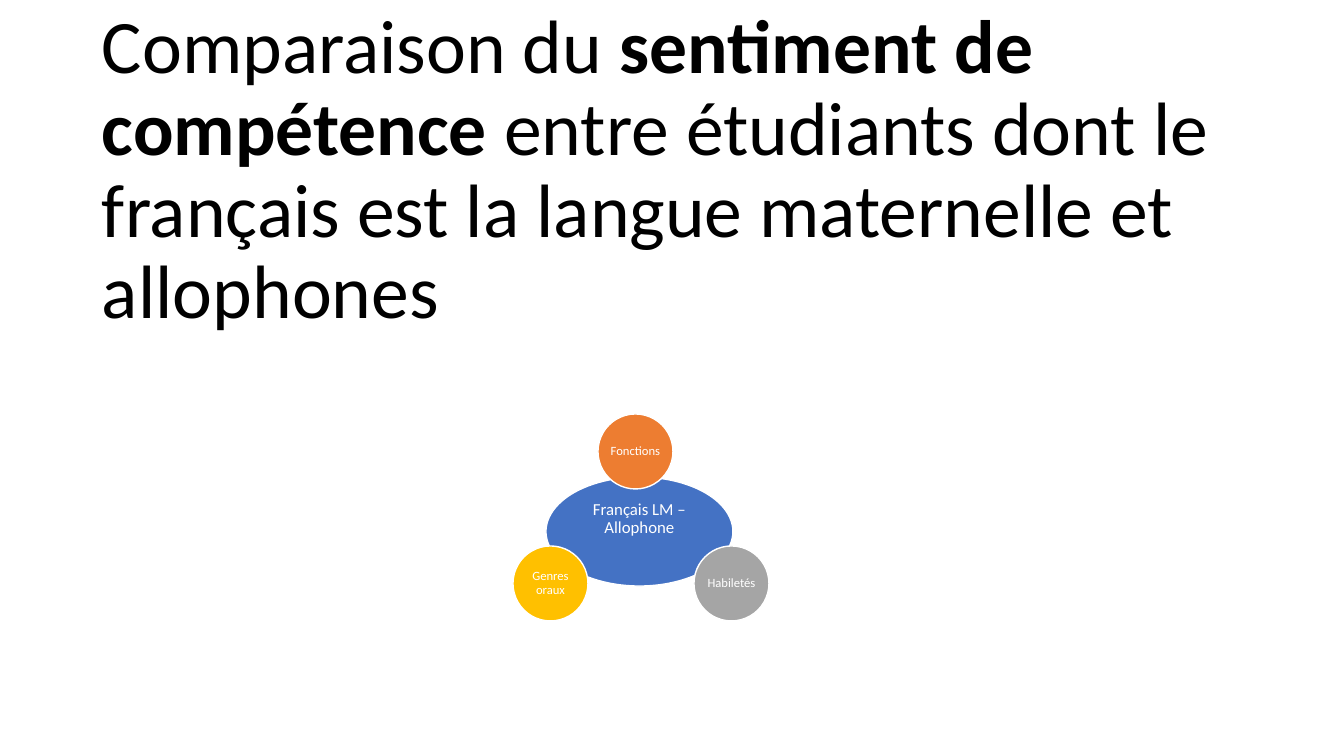
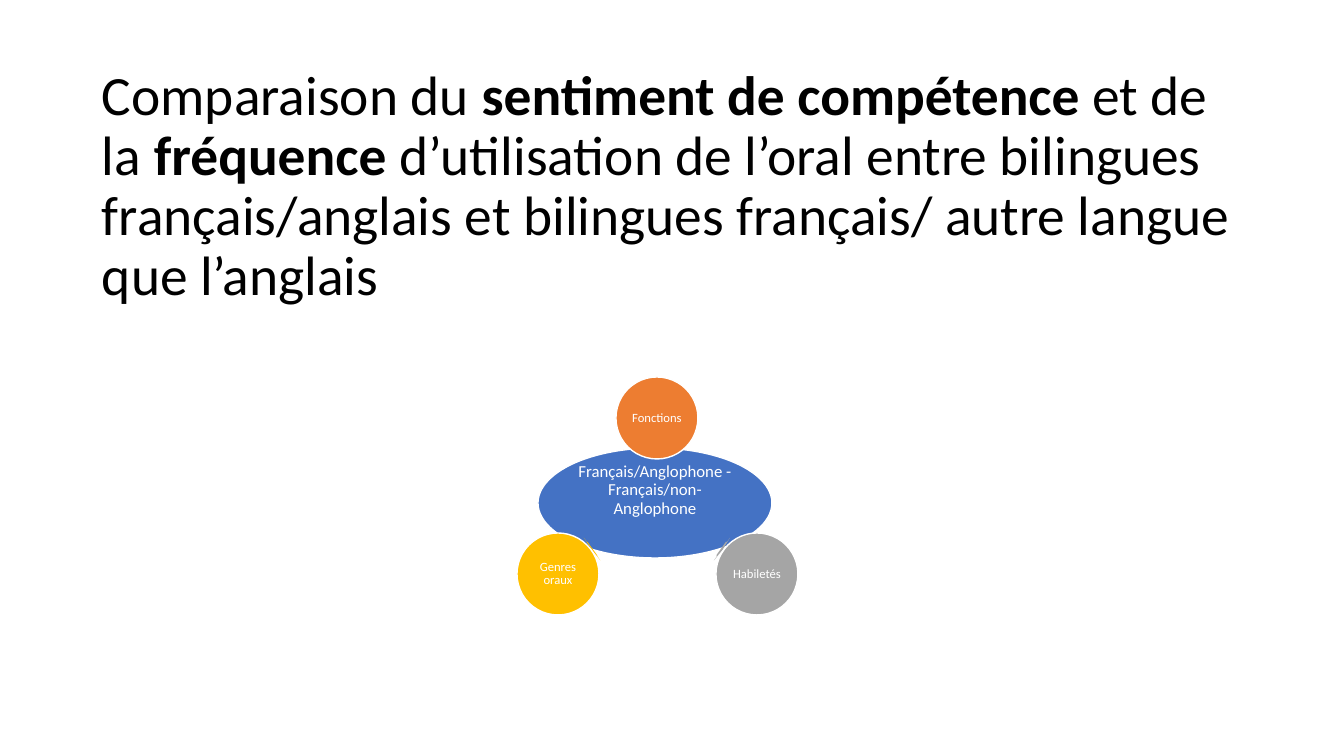
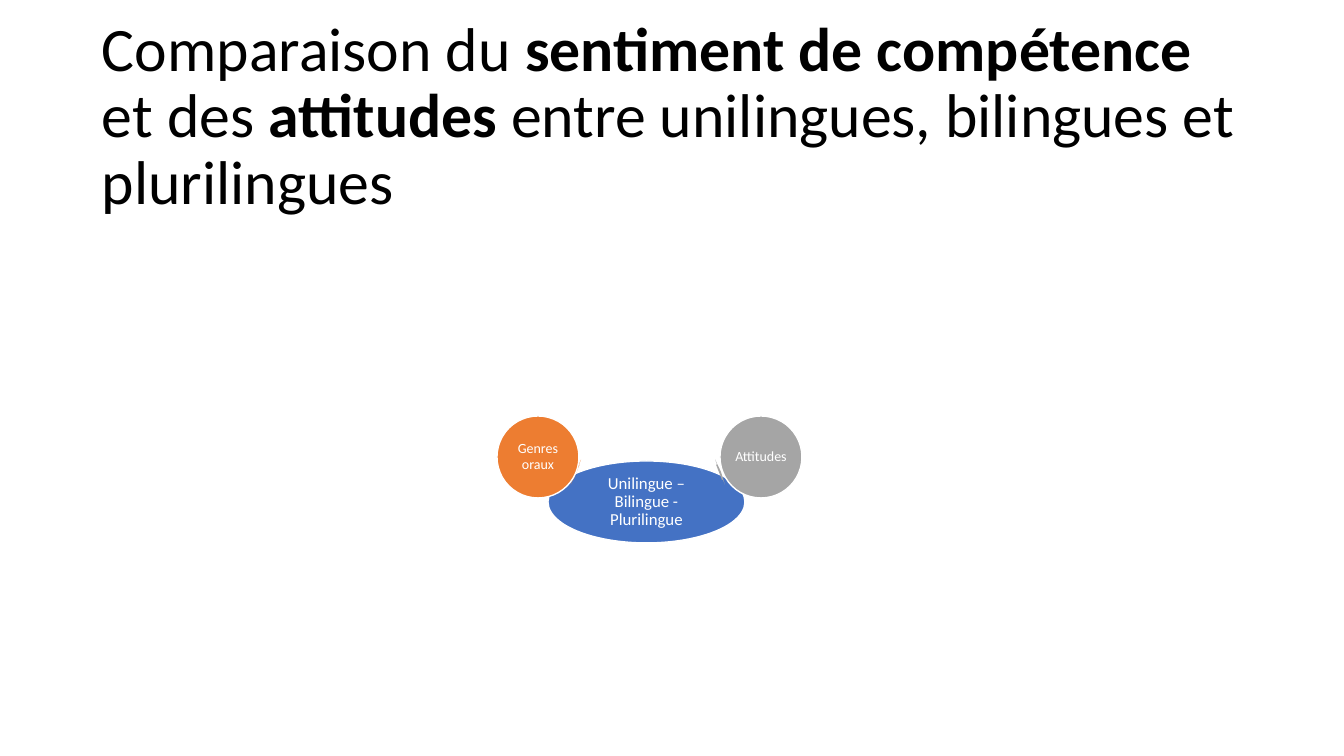
from pptx import Presentation
from pptx.dml.color import RGBColor
from pptx.enum import shapes, text
from pptx.util import Emu, Pt

PX = 914400 / 100.8
FONT = "Calibri"
BLACK = RGBColor(0x00, 0x00, 0x00)
WHITE = RGBColor(0xFF, 0xFF, 0xFF)
BLUE = RGBColor(0x44, 0x72, 0xC4)
ORANGE = RGBColor(0xED, 0x7D, 0x31)
GREY = RGBColor(0xA5, 0xA5, 0xA5)
GOLD = RGBColor(0xFF, 0xC0, 0x00)
SATELLITE_COLORS = (ORANGE, GREY, GOLD)


def px(*lengths):
    return [Emu(round(n * PX)) for n in lengths]


def write(sp, parts, size, color=WHITE, align=text.PP_ALIGN.CENTER,
          anchor=text.MSO_ANCHOR.MIDDLE, insets=(1, 1, 1, 1)):
    """Fill a shape with one paragraph; every second part is bold."""
    tf = sp.text_frame
    tf.word_wrap = True
    tf.auto_size = text.MSO_AUTO_SIZE.NONE
    tf.vertical_anchor = anchor
    tf.margin_left, tf.margin_top, tf.margin_right, tf.margin_bottom = px(*insets)
    p = tf.paragraphs[0]
    p.alignment = align
    p.line_spacing = 0.9
    for i, part in enumerate(parts):
        r = p.add_run()
        r.text = part
        r.font.name = FONT
        r.font.size = Pt(size)
        r.font.bold = i % 2 == 1
        r.font.color.rgb = color


def add_filled(group, kind, box, color, outlined=True):
    sp = group.shapes.add_shape(kind, *px(*box))
    sp.shadow.inherit = False
    sp.fill.solid()
    sp.fill.fore_color.rgb = color
    if outlined:
        sp.line.color.rgb = WHITE
        sp.line.width = Pt(1)
    else:
        sp.line.fill.background()
    return sp


def add_title(slide, box, parts, size, bottom=5):
    sp = slide.shapes.add_textbox(*px(*box))
    write(sp, parts, size, BLACK, text.PP_ALIGN.LEFT,
          text.MSO_ANCHOR.BOTTOM, (10, 5, 10, bottom))


def add_radial(slide, origin, core, diameter, size, arrow_length, satellites):
    """Central ellipse with satellite circles, all placed from origin."""
    x, y = origin
    group = slide.shapes.add_group_shape()

    # Central theme
    label, (left, top, width, height), bottom = core
    sp = add_filled(group, shapes.MSO_SHAPE.OVAL,
                    (x + left, y + top, width, height), BLUE)
    write(sp, [label], 12, insets=(2, 2, 2, bottom))

    # Arrows and satellites
    for color, (label, (left, top), arrow) in zip(SATELLITE_COLORS, satellites):
        mid_x, mid_y, width, angle = arrow
        sp = add_filled(group, shapes.MSO_SHAPE.RIGHT_ARROW,
                        (x + mid_x - width / 2, y + mid_y - arrow_length / 2,
                         width, arrow_length), color, outlined=False)
        sp.adjustments[0] = 0.6
        sp.adjustments[1] = 0.5
        sp.rotation = angle
        sp = add_filled(group, shapes.MSO_SHAPE.OVAL,
                        (x + left, y + top, diameter, diameter), color)
        write(sp, [label], size)


# Title and diagram of each slide
SLIDES = [
    (dict(box=(92, 52, 1159, 288), size=54, parts=[
        "Comparaison du ", "sentiment de compétence",
        " entre étudiants dont le français est la langue maternelle et allophones"]),
     dict(origin=(513, 414), diameter=75, size=9, arrow_length=25,
          core=("Français LM – Allophone", (33, 63, 187, 109), 27),
          satellites=[
              ("Fonctions", (85, 0), (124, 68, 6, 86.2)),
              ("Habiletés", (181, 132), (189, 154, 5, 210)),
              ("Genres oraux", (0, 132), (65, 154, 5, 330))])),
    (dict(box=(92, 58, 1176, 254), size=39.6, parts=[
        "Comparaison du ", "sentiment de compétence ", "et de la ", "fréquence",
        " d’utilisation de l’oral entre bilingues français/anglais "
        "et bilingues français/ autre langue que l’anglais"]),
     dict(origin=(517, 377), diameter=82, size=9, arrow_length=28,
          core=("Français/Anglophone - Français/non-Anglophone",
                (21, 71, 234, 110), 27),
          satellites=[
              ("Fonctions", (99, 0), (139, 76, 6, 91.1)),
              ("Habiletés", (199, 156), (205, 172, 2, 35.3)),
              ("Genres oraux", (0, 156), (75, 172, 1, 143.8))])),
    (dict(box=(92, 85, 1159, 225), size=44.1, bottom=92, parts=[
        "Comparaison du ", "sentiment de compétence ", "et des ", "attitudes ",
        "entre unilingues, bilingues et plurilingues"]),
     dict(origin=(497, 416), diameter=82, size=10, arrow_length=27,
          core=("Unilingue – Bilingue - Plurilingue", (51, 45, 197, 82), 2),
          satellites=[
              ("Genres oraux", (0, 0), (79, 56, 1, 202.2)),
              ("Attitudes", (223, 0), (223, 56, 2, 338.7))])),
]


def main():
    prs = Presentation()
    prs.slide_width, prs.slide_height = px(1344, 756)
    for title, radial in SLIDES:
        slide = prs.slides.add_slide(prs.slide_layouts[6])
        add_title(slide, **title)
        add_radial(slide, **radial)
    prs.save("out.pptx")


if __name__ == "__main__":
    main()
